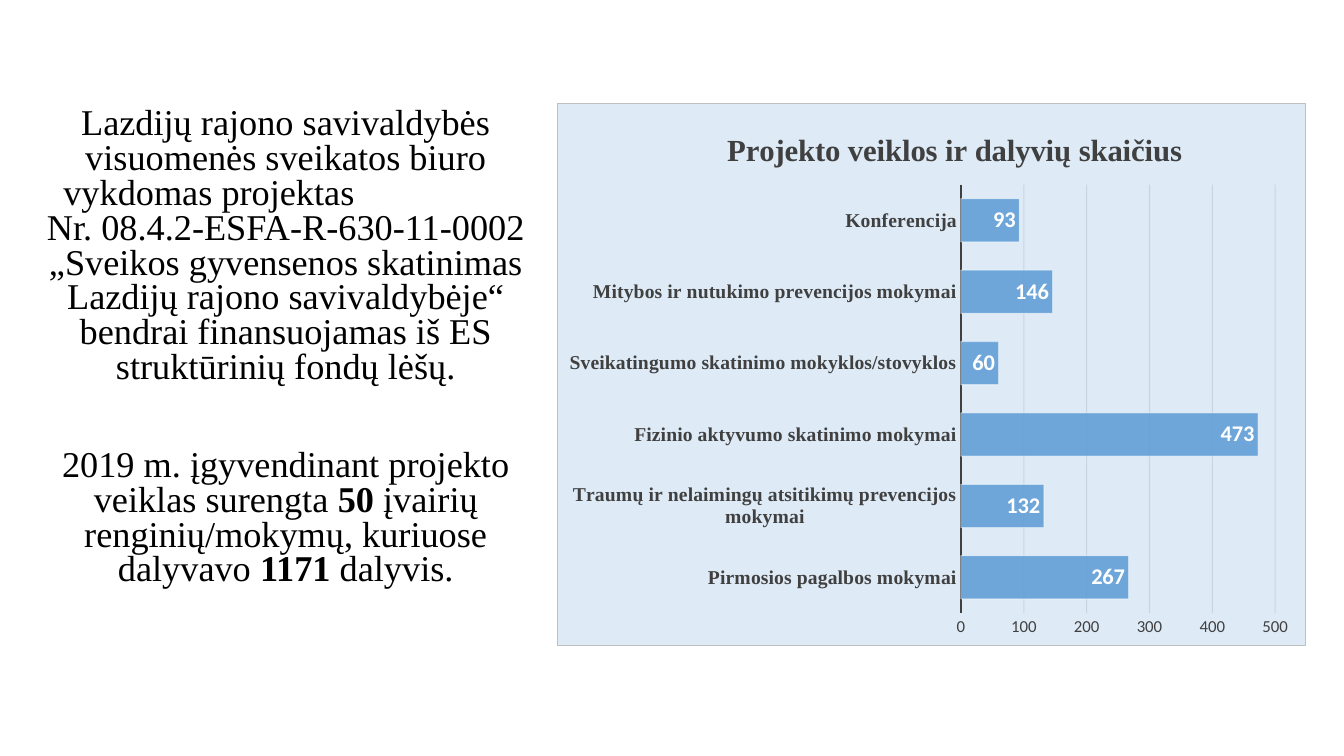
from lxml import etree
from pptx import Presentation
from pptx.chart.data import CategoryChartData
from pptx.dml.color import RGBColor
from pptx.enum.chart import XL_CHART_TYPE, XL_LABEL_POSITION, XL_TICK_MARK
from pptx.enum.text import PP_ALIGN
from pptx.oxml import parse_xml
from pptx.oxml.ns import nsdecls, qn
from pptx.util import Inches, Pt

BLACK = RGBColor(0x00, 0x00, 0x00)
WHITE = RGBColor(0xFF, 0xFF, 0xFF)
DARK = RGBColor(0x40, 0x40, 0x40)
GRID = RGBColor(0x0D, 0x0D, 0x0D)
BORDER = RGBColor(0xBF, 0xBF, 0xBF)
PALE_BLUE = RGBColor(0xDE, 0xEB, 0xF7)
BLUE = RGBColor(0x5B, 0x9B, 0xD5)
SERIF, SANS = "Times New Roman", "Calibri"
BAR_CLUSTERED = XL_CHART_TYPE.BAR_CLUSTERED
INSIDE_END = XL_LABEL_POSITION.INSIDE_END
NO_TICK = XL_TICK_MARK.NONE
CENTER, LEFT = PP_ALIGN.CENTER, PP_ALIGN.LEFT

TITLE = "Projekto veiklos ir dalyvių skaičius"
PARTICIPANTS = {
    "Pirmosios pagalbos mokymai": 267,
    "Traumų ir nelaimingų atsitikimų prevencijos mokymai": 132,
    "Fizinio aktyvumo skatinimo mokymai": 473,
    "Sveikatingumo skatinimo mokyklos/stovyklos": 60,
    "Mitybos ir nutukimo prevencijos mokymai": 146,
    "Konferencija": 93,
}
PARAGRAPHS = [
    (CENTER, 10, 0, [("Lazdijų rajono savivaldybės visuomenės sveikatos biuro", False)]),
    (LEFT, 0, 0.25, [("vykdomas projektas", False)]),
    (CENTER, 0, 0, [("Nr. 08.4.2-ESFA-R-630-11-0002 „Sveikos gyvensenos skatinimas "
                     "Lazdijų rajono savivaldybėje“ bendrai finansuojamas iš ES "
                     "struktūrinių fondų lėšų.", False)]),
    (CENTER, 45, 0, [("2019 m. įgyvendinant projekto veiklas surengta ", False), ("50", True),
                     (" įvairių renginių/mokymų, kuriuose dalyvavo ", False),
                     ("1171", True), (" dalyvis.", False)]),
]


def set_font(font, color, **values):
    """Apply a colour and format values to a font."""
    for name, value in values.items():
        setattr(font, name, value)
    font.color.rgb = color


def set_line(line, color, width):
    """Give a line its colour and width in points."""
    line.color.rgb = color
    line.width = Pt(width)


def set_alpha(properties, percent):
    """Make the first colour inside an element partly transparent."""
    color = next(properties.iter(qn("a:srgbClr")))
    etree.SubElement(color, qn("a:alpha")).set("val", str(percent * 1000))


def set_layout(parent, position, inner=False, **fractions):
    """Place a chart part at fractions of the chart area."""
    for old in parent.findall(qn("c:layout")):
        parent.remove(old)
    target = '<c:layoutTarget val="inner"/>' if inner else ""
    modes = "".join(f'<c:{side}Mode val="edge"/>' for side in "xy")
    sizes = "".join(f'<c:{name} val="{value}"/>' for name, value in fractions.items())
    parent.insert(position, parse_xml(
        f'<c:layout {nsdecls("c")}><c:manualLayout>{target}{modes}{sizes}'
        "</c:manualLayout></c:layout>"))


def add_summary(page):
    """Add the project description."""
    box = page.shapes.add_textbox(Inches(0.28), Inches(1.02), Inches(5.11), Inches(5.39))
    frame = box.text_frame
    frame.word_wrap = True
    for index, (alignment, before, indent, spans) in enumerate(PARAGRAPHS):
        para = frame.add_paragraph() if index else frame.paragraphs[0]
        values = {"alignment": alignment, "line_spacing": 0.8, "space_before": Pt(before)}
        for name, value in values.items():
            setattr(para, name, value)
        if indent:
            para._p.get_or_add_pPr().set("marL", str(Inches(indent)))
        for text, bold in spans:
            span = para.add_run()
            span.text = text
            set_font(span.font, BLACK, name=SERIF, size=Pt(25.9), bold=bold)


def style_title(chart):
    """Write and place the chart title."""
    chart.has_title = True
    title = chart.chart_title
    title.include_in_layout = False
    span = title.text_frame.paragraphs[0].add_run()
    span.text = TITLE
    set_font(span.font, DARK, name=SERIF, size=Pt(22), bold=True)
    set_layout(title._element, 1, x=0.22, y=0.04)


def style_axes(chart):
    """Format both axes and the gridlines."""
    category, value = chart.category_axis, chart.value_axis
    for axis in (category, value):
        axis.major_tick_mark = axis.minor_tick_mark = NO_TICK
    set_font(category.tick_labels.font, DARK, name=SERIF, size=Pt(14), bold=True)
    set_line(category.format.line, DARK, 1.5)
    set_font(value.tick_labels.font, DARK, name=SANS, size=Pt(12), bold=False)
    value.format.line.fill.background()
    value.minimum_scale, value.maximum_scale, value.major_unit = 0, 500, 100
    value.has_major_gridlines = True
    set_line(value.major_gridlines.format.line, GRID, 0.75)
    set_alpha(value.major_gridlines._xAx.find(qn("c:majorGridlines")), 10)


def style_bars(chart):
    """Format the bars and their value labels."""
    plot = chart.plots[0]
    plot.gap_width = 65
    plot.vary_by_categories = False
    series = plot.series[0]
    series.format.fill.solid()
    series.format.fill.fore_color.rgb = BLUE
    set_line(series.format.line, WHITE, 0.75)
    properties = series._element.find(qn("c:spPr"))
    set_alpha(properties.find(qn("a:solidFill")), 85)
    set_alpha(properties.find(qn("a:ln")), 50)
    labels = series.data_labels
    labels.show_value = True
    labels.position = INSIDE_END
    set_font(labels.font, WHITE, name=SANS, size=Pt(16), bold=True)


def style_chart_area(chart):
    """Fill and outline the chart area."""
    area = parse_xml(
        f'<c:spPr {nsdecls("c", "a")}>'
        f'<a:solidFill><a:srgbClr val="{PALE_BLUE}"/></a:solidFill>'
        f'<a:ln w="{Pt(0.75)}"><a:solidFill><a:srgbClr val="{BORDER}"/></a:solidFill></a:ln>'
        "</c:spPr>")
    chart._chartSpace.find(qn("c:chart")).addnext(area)


def add_participant_chart(page):
    """Add the bar chart of participants by activity."""
    data = CategoryChartData()
    data.categories = list(PARTICIPANTS)
    data.add_series("Series 1", list(PARTICIPANTS.values()))
    chart = page.shapes.add_chart(BAR_CLUSTERED, Inches(5.52), Inches(1.02),
                                  Inches(7.43), Inches(5.39), data).chart
    chart.has_legend = False
    set_font(chart.font, BLACK, name=SANS, size=Pt(10))
    style_title(chart)
    style_axes(chart)
    style_bars(chart)
    style_chart_area(chart)
    plot_area = chart._chartSpace.find(qn("c:chart")).find(qn("c:plotArea"))
    set_layout(plot_area, 0, inner=True, x=0.54, y=0.15, w=0.42, h=0.79)


def main():
    """Build and save the slide."""
    deck = Presentation()
    deck.slide_width, deck.slide_height = Inches(13.33), Inches(7.5)
    page = deck.slides.add_slide(deck.slide_layouts[6])
    add_summary(page)
    add_participant_chart(page)
    deck.save("out.pptx")


if __name__ == "__main__":
    main()
